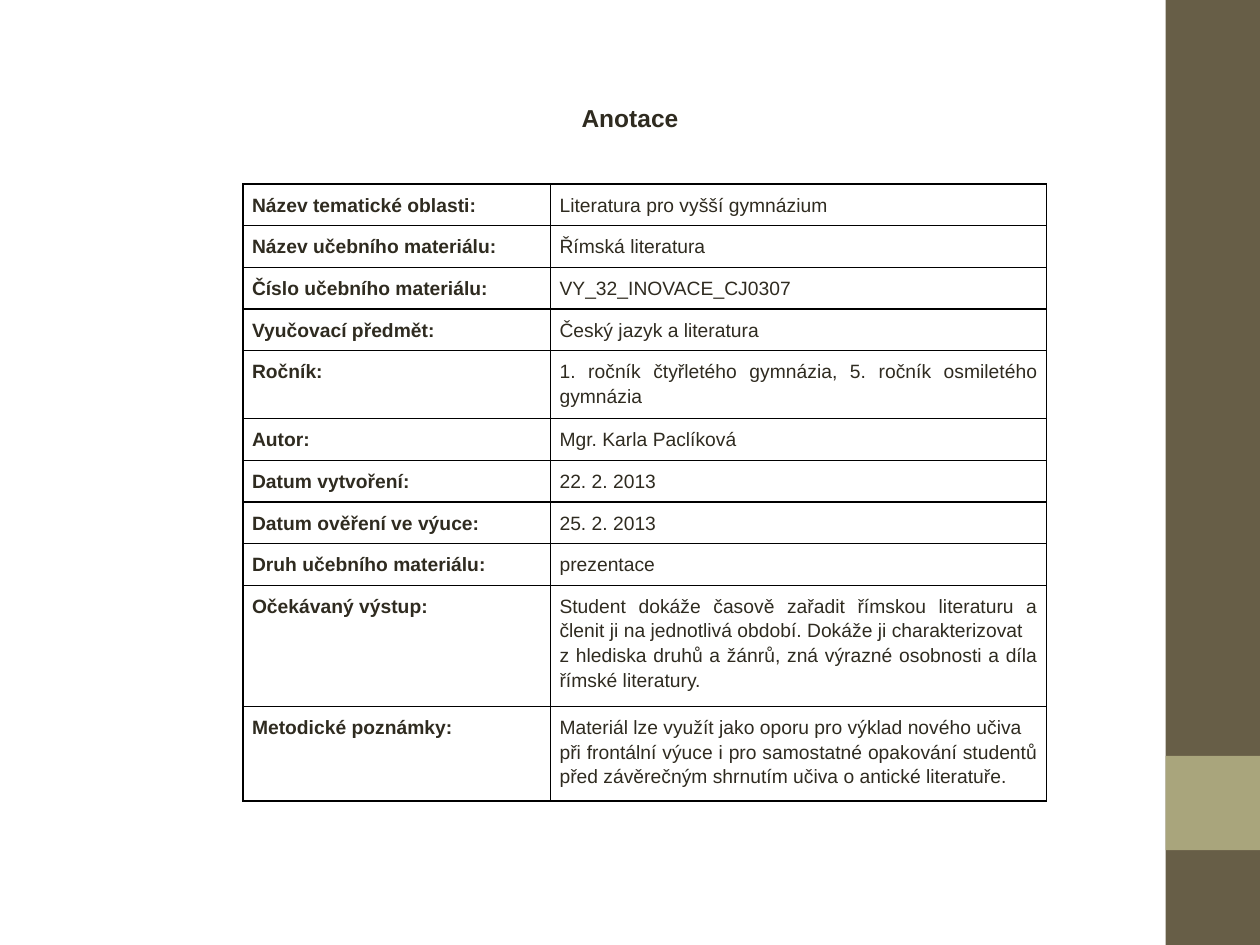
from lxml.etree import SubElement
from pptx import Presentation
from pptx.dml.color import RGBColor
from pptx.enum.shapes import MSO_SHAPE as Preset
from pptx.enum.text import MSO_ANCHOR as Anchor, MSO_AUTO_SIZE as AutoSize, PP_ALIGN as Align
from pptx.oxml import parse_xml
from pptx.oxml.ns import nsdecls, qn
from pptx.util import Cm, Pt

INK, WHITE, BLACK = "2F2B20", "FFFFFF", "000000"
BROWN, OLIVE = "675E47", "A9A57C"

# Label, paragraphs of the value, row height in cm
ANNOTATION = [
    ("Název tematické oblasti:", ["Literatura pro vyšší gymnázium"], 0.84),
    ("Název učebního materiálu:", ["Římská literatura"], 0.84),
    ("Číslo učebního materiálu:", ["VY_32_INOVACE_CJ0307"], 0.84),
    ("Vyučovací předmět:", ["Český jazyk a literatura"], 0.84),
    ("Ročník:", ["1. ročník čtyřletého gymnázia, 5. ročník osmiletého gymnázia"], 1.37),
    ("Autor:", ["Mgr. Karla Paclíková"], 0.84),
    ("Datum vytvoření:", ["22. 2. 2013"], 0.84),
    ("Datum ověření ve výuce:", ["25. 2. 2013"], 0.84),
    ("Druh učebního materiálu:", ["prezentace"], 0.84),
    ("Očekávaný výstup:",
     ["Student dokáže časově zařadit římskou literaturu a členit ji na jednotlivá období. "
      "Dokáže ji charakterizovat",
      "z hlediska druhů a žánrů, zná výrazné osobnosti a díla římské literatury."], 2.44),
    ("Metodické poznámky:",
     ["Materiál lze využít jako oporu pro výklad nového učiva",
      "při frontální výuce i pro samostatné opakování studentů před závěrečným shrnutím "
      "učiva o antické literatuře."], 1.91),
]


def color(hex_string):
    return RGBColor.from_string(hex_string)


class SlideBuilder:
    font = "Arial"
    title_size = 14
    table_size = 11
    line_spacing = 1.15

    def __init__(self, slide):
        self.slide = slide

    def add_run(self, paragraph, text, size, bold):
        run = paragraph.add_run()
        run.text = text
        run.font.name = self.font
        run.font.size = Pt(size)
        run.font.bold = bold
        run.font.color.rgb = color(INK)

    def rectangle(self, left, top, width, height, fill):
        shape = self.slide.shapes.add_shape(
            Preset.RECTANGLE, Cm(left), Cm(top), Cm(width), Cm(height))
        shape.shadow.inherit = False
        shape.fill.solid()
        shape.fill.fore_color.rgb = color(fill)
        shape.line.fill.background()

    def title(self, text, left, top, width, height):
        title = self.slide.shapes.title
        title.left, title.top = Cm(left), Cm(top)
        title.width, title.height = Cm(width), Cm(height)
        frame = title.text_frame
        frame.word_wrap = False
        frame.auto_size = AutoSize.NONE
        frame.vertical_anchor = Anchor.MIDDLE
        paragraph = frame.paragraphs[0]
        paragraph.alignment = Align.CENTER
        self.add_run(paragraph, text, self.title_size, True)

    def border(self, cell):
        properties = cell._tc.get_or_add_tcPr()
        for position, side in enumerate(("lnL", "lnR", "lnT", "lnB")):
            line = parse_xml(f'<a:{side} {nsdecls("a")} w="{Pt(1)}"/>')
            fill = SubElement(line, qn("a:solidFill"))
            SubElement(fill, qn("a:srgbClr"), val=BLACK)
            properties.insert(position, line)

    def cell(self, cell, texts, bold, alignment):
        cell.margin_left = cell.margin_right = Cm(0.18)
        cell.margin_top = cell.margin_bottom = Cm(0.15)
        cell.fill.solid()
        cell.fill.fore_color.rgb = color(WHITE)
        self.border(cell)
        frame = cell.text_frame
        for index, text in enumerate(texts):
            paragraph = frame.add_paragraph() if index else frame.paragraphs[0]
            paragraph.alignment = alignment
            paragraph.line_spacing = self.line_spacing
            self.add_run(paragraph, text, self.table_size, bold)

    def table(self, rows, left, top, column_widths):
        height = sum(row_height for _, _, row_height in rows)
        table = self.slide.shapes.add_table(
            len(rows), len(column_widths), Cm(left), Cm(top),
            Cm(sum(column_widths)), Cm(height)).table
        table.first_row = table.horz_banding = False
        for column, width in zip(table.columns, column_widths):
            column.width = Cm(width)
        for row, (label, values, row_height) in zip(table.rows, rows):
            row.height = Cm(row_height)
            self.cell(row.cells[0], [label], True, Align.LEFT)
            self.cell(row.cells[1], values, False, Align.JUSTIFY)


def main():
    presentation = Presentation()
    presentation.slide_width, presentation.slide_height = Cm(25.4), Cm(19.05)
    title_only = presentation.slide_layouts[5]
    builder = SlideBuilder(presentation.slides.add_slide(title_only))

    builder.rectangle(23.5, 0, 1.9, 19.05, BROWN)
    builder.rectangle(23.5, 15.24, 1.9, 1.9, OLIVE)
    builder.title("Anotace", 0, 1.73, 25.4, 1.27)
    builder.table(ANNOTATION, 4.9, 3.71, [6.2, 10])

    presentation.save("out.pptx")


if __name__ == "__main__":
    main()
